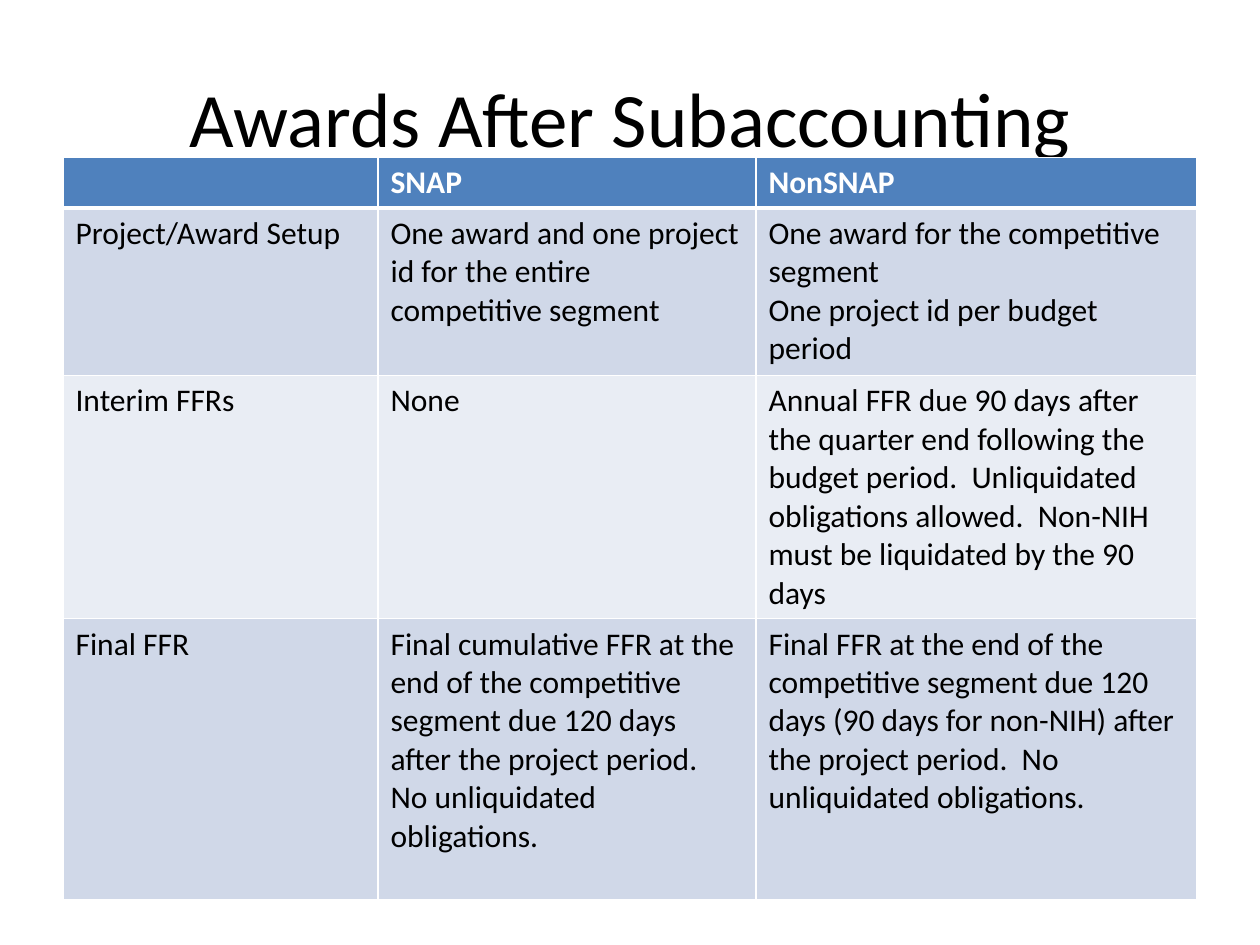
from lxml.etree import SubElement
from pptx import Presentation
from pptx.dml.color import RGBColor
from pptx.enum.text import MSO_ANCHOR as Anchor, PP_ALIGN as Align
from pptx.oxml.ns import qn
from pptx.util import Inches, Pt

COLORS = {
    "text": "000000",
    "header": "4F81BD",
    "header_text": "FFFFFF",
    "border": "FFFFFF",
    "band_dark": "D0D8E8",
    "band_light": "E9EDF4",
}
WIDTH, HEIGHT = 10, 7.5
MARGIN = 0.05  # share of the slide width
COLUMN_WIDTHS = [2.5, 3, 3.5]
ROW_HEIGHTS = [0.4, 1.33, 1.93, 2.23]
ROWS = [
    ["", "SNAP", "NonSNAP"],
    [
        "Project/Award Setup",
        "One award and one project id for the entire competitive segment",
        "One award for the competitive segment\nOne project id per budget period",
    ],
    [
        "Interim FFRs",
        "None",
        "Annual FFR due 90 days after the quarter end following the budget period.  "
        "Unliquidated obligations allowed.  Non-NIH must be liquidated by the 90 days",
    ],
    [
        "Final FFR",
        "Final cumulative FFR at the end of the competitive segment due 120 days "
        "after the project period.  No unliquidated obligations.",
        "Final FFR at the end of the competitive segment due 120 days "
        "(90 days for non-NIH) after the project period.  No unliquidated obligations.",
    ],
]


class SlideBuilder:
    """Holds the style and the current slide; lengths are shares of the slide."""

    font_name = "Calibri"
    title_size = 44
    body_size = 18

    def __init__(self, presentation):
        self.presentation = presentation
        self.slide = presentation.slides.add_slide(presentation.slide_layouts[6])

    def box(self, left, top, width, height):
        across, down = self.presentation.slide_width, self.presentation.slide_height
        return (int(left * across), int(top * down),
                int(width * across), int(height * down))

    def style(self, text_frame, size, color, bold=False, align=Align.LEFT):
        for paragraph in text_frame.paragraphs:
            paragraph.alignment = align
            font = paragraph.font
            font.name, font.size, font.bold = self.font_name, Pt(size), bold
            font.color.rgb = RGBColor.from_string(COLORS[color])
            for run in paragraph.runs:
                run.font.name, run.font.size, run.font.bold = font.name, font.size, bold
                run.font.color.rgb = font.color.rgb

    def title(self, text, left, top, width, height):
        shape = self.slide.shapes.add_textbox(*self.box(left, top, width, height))
        text_frame = shape.text_frame
        text_frame.word_wrap = True
        text_frame.vertical_anchor = Anchor.MIDDLE
        text_frame.text = text
        self.style(text_frame, self.title_size, "text", align=Align.CENTER)

    def borders(self, cell, top, bottom):
        properties = cell._tc.get_or_add_tcPr()
        for side, points in (("L", 1), ("R", 1), ("T", top), ("B", bottom)):
            line = SubElement(properties, qn(f"a:ln{side}"), w=str(Pt(points)))
            fill = SubElement(line, qn("a:solidFill"))
            SubElement(fill, qn("a:srgbClr"), val=COLORS["border"])

    def table(self, rows, column_widths, row_heights, left, top):
        width, height = sum(column_widths) / WIDTH, sum(row_heights) / HEIGHT
        table = self.slide.shapes.add_table(
            len(rows), len(column_widths), *self.box(left, top, width, height)).table
        for column, inches in zip(table.columns, column_widths):
            column.width = Inches(inches)
        for index, (row, inches) in enumerate(zip(table.rows, row_heights)):
            row.height = Inches(inches)
            is_header = index == 0
            band = "band_dark" if index % 2 else "band_light"
            for cell, text in zip(row.cells, rows[index]):
                self.borders(cell, top=3 if index == 1 else 1, bottom=3 if is_header else 1)
                cell.fill.solid()
                cell.fill.fore_color.rgb = RGBColor.from_string(
                    COLORS["header" if is_header else band])
                cell.text_frame.text = text
                self.style(cell.text_frame, self.body_size,
                           "header_text" if is_header else "text", bold=is_header)


def main():
    presentation = Presentation()
    presentation.slide_width, presentation.slide_height = Inches(WIDTH), Inches(HEIGHT)
    builder = SlideBuilder(presentation)
    builder.title("Awards After Subaccounting", MARGIN, 0.04, 1 - 2 * MARGIN, 1 / 6)
    builder.table(ROWS, COLUMN_WIDTHS, ROW_HEIGHTS, MARGIN, 1 / 6)
    presentation.save("out.pptx")


if __name__ == "__main__":
    main()
